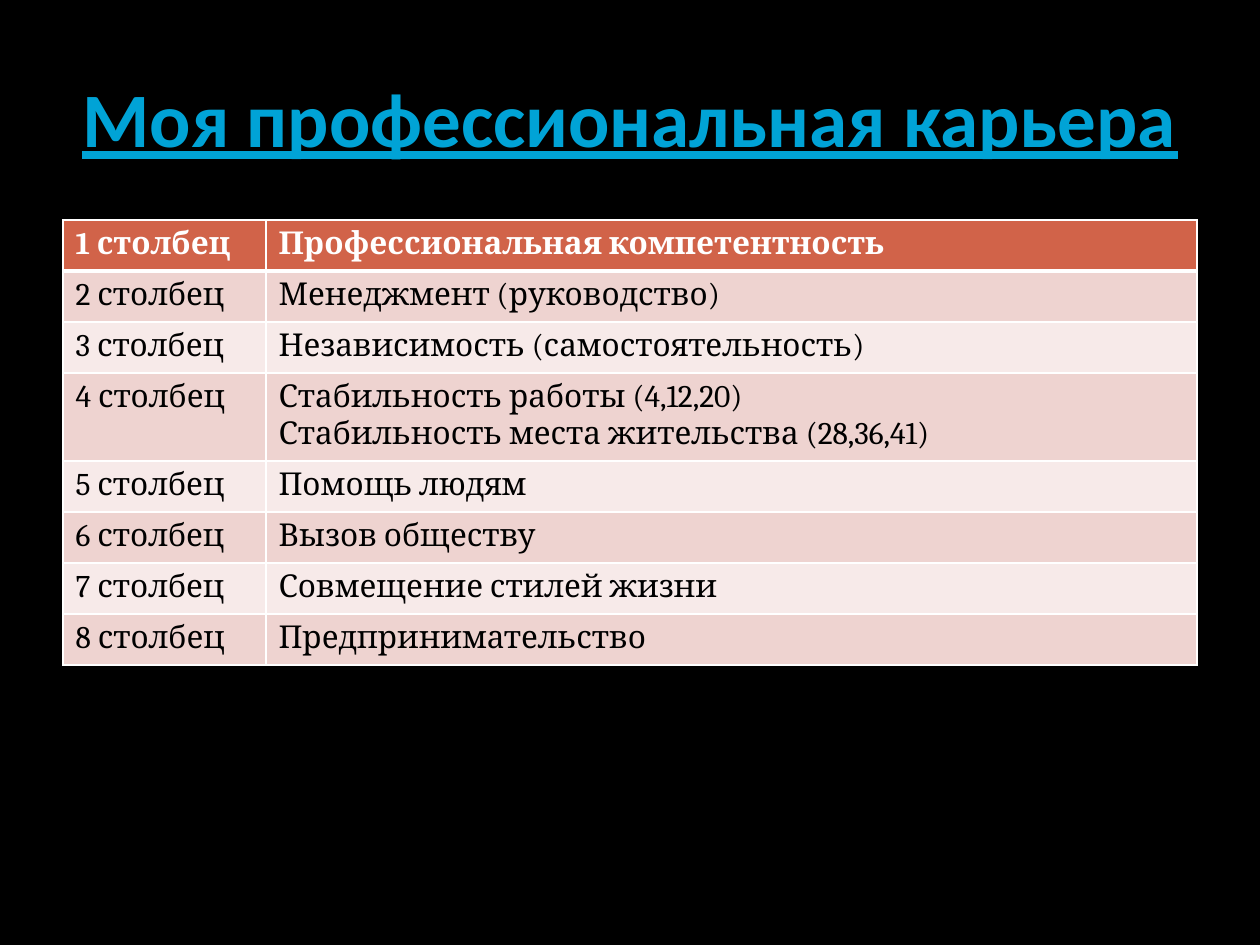
"""Build the career slide: a title over a two-column table."""
from lxml import etree
from pptx import Presentation, util as u
from pptx.dml.color import RGBColor
from pptx.enum import text
from pptx.oxml import ns

TITLE = "Моя профессиональная карьера"
ROWS = [
    ["Профессиональная компетентность"],
    ["Менеджмент (руководство)"],
    ["Независимость (самостоятельность)"],
    ["Стабильность работы (4,12,20)", "Стабильность места жительства (28,36,41)"],
    ["Помощь людям"],
    ["Вызов обществу"],
    ["Совмещение стилей жизни"],
    ["Предпринимательство"],
]
COLORS = {
    "page": "000000", "title": "00A3D6", "head": "D16349", "head_text": "FFFFFF",
    "odd": "EED3D0", "even": "F7EAE9", "text": "000000", "border": "FFFFFF",
}
PX = u.Inches(1) // 126
LEFT, WIDTH = 63, 1134
TITLE_TOP, TITLE_HEIGHT = 38, 157
TABLE_TOP, LABEL_WIDTH = 220, 203
ROW_HEIGHT, EXTRA_LINE = 51, 34


def px(*lengths):
    return [u.Emu(length * PX) for length in lengths]


def paint(fill, color):
    fill.solid()
    fill.fore_color.rgb = RGBColor.from_string(COLORS[color])


def write(frame, lines, font, size, color, bold, underline=None, align=None):
    for index, line in enumerate(lines):
        para = frame.add_paragraph() if index else frame.paragraphs[0]
        para.alignment = align
        span = para.add_run()
        span.text = line
        span.font.name, span.font.size = font, u.Pt(size)
        span.font.bold, span.font.underline = bold, underline
        span.font.color.rgb = RGBColor.from_string(COLORS[color])


def add_borders(cell, widths):
    properties = cell._tc.get_or_add_tcPr()
    for side, width in widths.items():
        line = etree.SubElement(properties, ns.qn(f"a:ln{side}"), w=str(u.Pt(width)))
        fill = etree.SubElement(line, ns.qn("a:solidFill"))
        etree.SubElement(fill, ns.qn("a:srgbClr"), val=COLORS["border"])


def add_title(page):
    box = page.shapes.add_textbox(*px(LEFT, TITLE_TOP, WIDTH, TITLE_HEIGHT))
    frame = box.text_frame
    frame.word_wrap = True
    frame.vertical_anchor = text.MSO_ANCHOR.MIDDLE
    write(frame, [TITLE], "Calibri", 44, "title", True, True, text.PP_ALIGN.CENTER)


def add_table(page):
    heights = [ROW_HEIGHT + EXTRA_LINE * (len(lines) - 1) for lines in ROWS]
    area = px(LEFT, TABLE_TOP, WIDTH, sum(heights))
    table = page.shapes.add_table(len(ROWS), 2, *area).table
    for column, width in zip(table.columns, px(LABEL_WIDTH, WIDTH - LABEL_WIDTH)):
        column.width = width
    for index, lines in enumerate(ROWS):
        table.rows[index].height = px(heights[index])[0]
        head = index == 0
        fill = "head" if head else "odd" if index % 2 else "even"
        widths = {"L": 1, "R": 1, "T": 3 if index == 1 else 1, "B": 3 if head else 1}
        for column, content in enumerate([[f"{index + 1} столбец"], lines]):
            cell = table.cell(index, column)
            add_borders(cell, widths)
            paint(cell.fill, fill)
            write(cell.text_frame, content, "Cambria", 18,
                  "head_text" if head else "text", head)


def main():
    deck = Presentation()
    deck.slide_width, deck.slide_height = px(1260, 945)
    page = deck.slides.add_slide(deck.slide_layouts[6])
    paint(page.background.fill, "page")
    add_title(page)
    add_table(page)
    deck.save("out.pptx")


if __name__ == "__main__":
    main()
